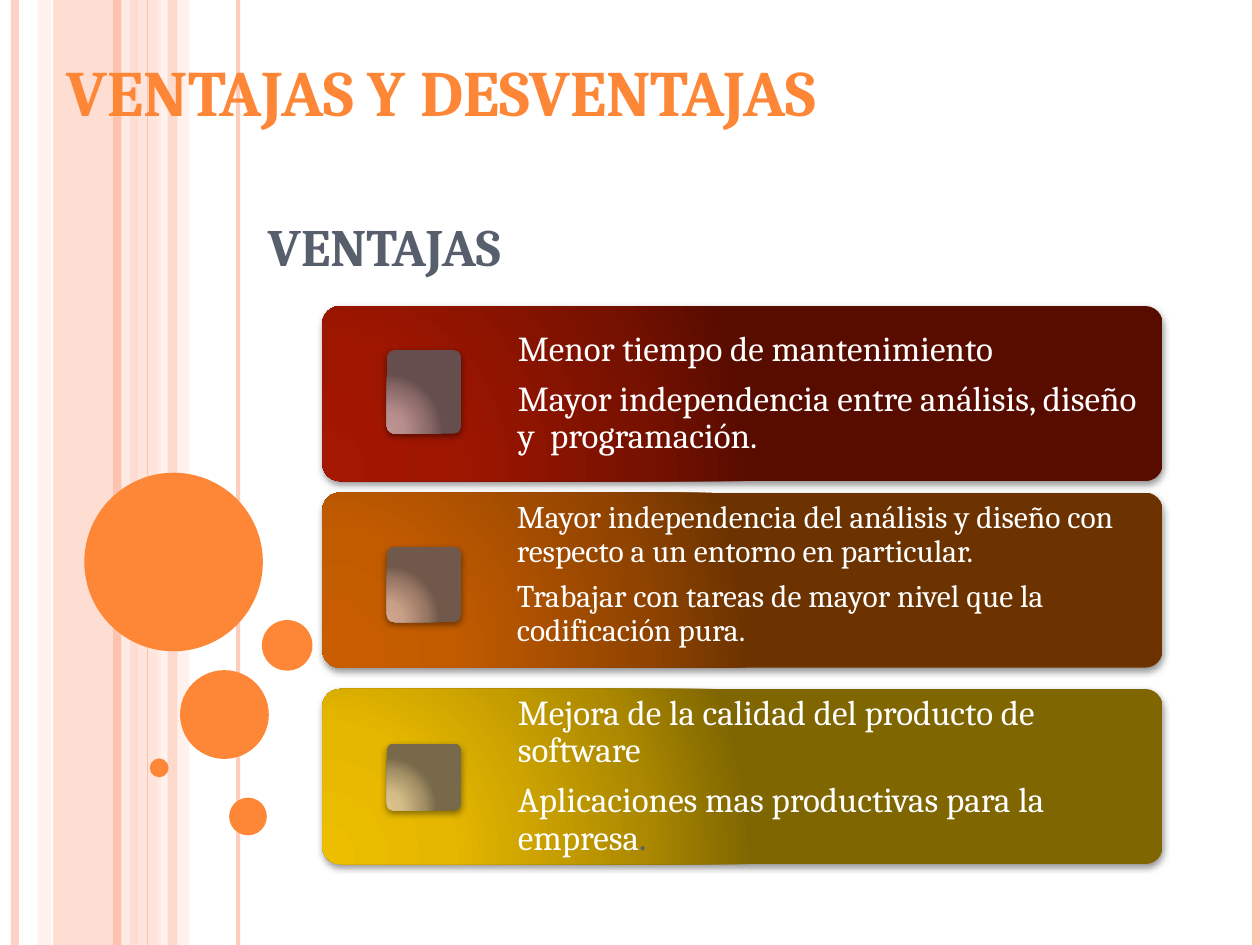
from lxml import etree
from pptx import Presentation
from pptx.dml.color import RGBColor
from pptx.enum.shapes import MSO_CONNECTOR, MSO_SHAPE
from pptx.enum.text import MSO_ANCHOR, MSO_AUTO_SIZE, PP_ALIGN
from pptx.oxml import parse_xml
from pptx.oxml.ns import nsdecls, qn
from pptx.util import Cm, Pt

WIDTH, HEIGHT = 25.4, 19.05
ORANGE, SLATE, WHITE = "FE8637", "575F6D", "FFFFFF"
PEACH, BLUSH, PALE = "FEC3AE", "FFD9CE", "FFEDE8"


def color(value):
    return RGBColor.from_string(value)


def set_alpha(fill_parent, percent):
    """Make the solid fill inside the given element partly transparent."""
    if percent < 100:
        tone = next(fill_parent.iter(qn("a:srgbClr")))
        etree.SubElement(tone, qn("a:alpha")).set("val", str(percent * 1000))


class Painter:
    font = "Cambria"

    def __init__(self, page):
        self.page = page
        self.shapes = page.shapes

    def shape(self, kind, left, top, width, height, fill, alpha=100):
        item = self.shapes.add_shape(kind, Cm(left), Cm(top), Cm(width), Cm(height))
        item.shadow.inherit = False
        item.line.fill.background()
        item.fill.solid()
        item.fill.fore_color.rgb = color(fill)
        set_alpha(item._element.spPr, alpha)
        return item

    def stripe(self, x, tone, points, alpha=100):
        line = self.shapes.add_connector(
            MSO_CONNECTOR.STRAIGHT, Cm(x), Cm(0), Cm(x), Cm(HEIGHT))
        line.line.color.rgb = color(tone)
        line.line.width = Pt(points)
        properties = line._element.spPr
        set_alpha(properties, alpha)
        etree.SubElement(properties, qn("a:effectLst"))

    def glossy(self, left, top, width, height, tones):
        """Rounded shape with a radial gradient and a soft shadow."""
        item = self.shape(MSO_SHAPE.ROUNDED_RECTANGLE, left, top, width, height, tones[0])
        item.adjustments[0] = 0.1
        stops = "".join(
            f'<a:gs pos="{position * 1000}"><a:srgbClr val="{tone}"/></a:gs>'
            for position, tone in zip((0, 30, 75, 100), tones))
        gradient = parse_xml(
            f'<a:gradFill {nsdecls("a")} rotWithShape="1"><a:gsLst>{stops}</a:gsLst>'
            '<a:path path="circle"><a:fillToRect l="5000" t="100000" r="120000" b="10000"/>'
            '</a:path></a:gradFill>')
        shadow = parse_xml(
            f'<a:outerShdw {nsdecls("a")} blurRad="{Pt(4)}" dist="{Pt(1.6)}" dir="5400000"'
            ' rotWithShape="0"><a:srgbClr val="000000"><a:alpha val="42000"/></a:srgbClr>'
            '</a:outerShdw>')
        properties = item._element.spPr
        properties.replace(properties.find(qn("a:solidFill")), gradient)
        properties.find(qn("a:effectLst")).append(shadow)

    def style(self, para, size, tone, bold=False):
        para.font.name = self.font
        para.font.size = Pt(size)
        para.font.bold = bold
        para.font.color.rgb = color(tone)

    def title(self, text, left, top, width, height):
        box = self.page.shapes.title
        box.left, box.top, box.width, box.height = Cm(left), Cm(top), Cm(width), Cm(height)
        self.shapes._spTree.append(box._element)  # in front of the decoration
        frame = box.text_frame
        frame.text = text
        frame.auto_size = MSO_AUTO_SIZE.NONE
        frame.vertical_anchor = MSO_ANCHOR.TOP
        para = frame.paragraphs[0]
        para.alignment = PP_ALIGN.LEFT
        para.space_before = Pt(6)
        self.style(para, 37, ORANGE, bold=True)

    def text_box(self, left, top, width, height, anchor):
        frame = self.shapes.add_textbox(
            Cm(left), Cm(top), Cm(width), Cm(height)).text_frame
        frame.word_wrap = True
        frame.vertical_anchor = anchor
        return frame

    def heading(self, text, left, top, width, height, indent):
        frame = self.text_box(left, top, width, height, MSO_ANCHOR.BOTTOM)
        frame.margin_left = Cm(indent)
        para = frame.paragraphs[0]
        para.text = text
        para.alignment = PP_ALIGN.CENTER
        self.style(para, 30, SLATE, bold=True)

    def card_text(self, texts, left, top, width, height, size, anchor):
        frame = self.text_box(left, top, width, height, anchor)
        frame.margin_left = frame.margin_right = Cm(size / 100)
        frame.margin_top = frame.margin_bottom = Cm(size / 100)
        for index, text in enumerate(texts):
            para = frame.add_paragraph() if index else frame.paragraphs[0]
            para.line_spacing = 0.9
            para.space_after = Pt(0.35 * size)
            self.style(para, size, WHITE)
            para.add_run().text = text
        return frame


# Vertical bands: left, width, colour, opacity
BANDS = [(1.07, 1.7, PEACH, 54), (0.76, 0.28, BLUSH, 36),
         (2.74, 0.51, BLUSH, 70), (3.18, 0.64, PALE, 71)]
# Vertical lines: x, colour, points, opacity
STRIPES = [(0.3, PEACH, 4.5, 73), (2.54, PALE, 4.5, 83), (2.36, PEACH, 4.5, 100),
           (4.8, PEACH, 2.25, 82), (2.97, PEACH, 0.75, 100), (25.32, PEACH, 4.5, 100)]
# Bubbles: left, top, diameter
BUBBLES = [(1.7, 9.53, 3.6), (3.63, 13.51, 1.79), (3.02, 15.29, 0.38),
           (4.62, 16.08, 0.76), (5.28, 12.5, 1.02)]
# Cards: top, card tones, icon top, icon height, icon tones, text size, anchor, texts
CARDS = [
    (6.17, ("A41700", "9F1600", "771100", "580C00"),
     7.06, 1.68, ("BE9492", "B78E8D", "8A6A69", "664E4E"), 20, MSO_ANCHOR.MIDDLE,
     ("Menor tiempo de mantenimiento",
      "Mayor independencia entre análisis, diseño y  programación.")),
    (9.93, ("C95E00", "C25B00", "914400", "6C3300"),
     11.02, 1.52, ("D0A58C", "C89F87", "987764", "70584A"), 18, MSO_ANCHOR.TOP,
     ("Mayor independencia del análisis y diseño con respecto a un entorno en particular.",
      "Trabajar con tareas de mayor nivel que la codificación pura.")),
    (13.89, ("EDBE00", "E5B700", "AC8900", "7F6600"),
     14.99, 1.35, ("DCC38C", "D4BC87", "A18E64", "77694A"), 20, MSO_ANCHOR.MIDDLE,
     ("Mejora de la calidad del producto de software",
      "Aplicaciones mas productivas para la empresa")),
]


def main():
    deck = Presentation()
    deck.slide_width, deck.slide_height = Cm(WIDTH), Cm(HEIGHT)
    painter = Painter(deck.slides.add_slide(deck.slide_layouts[5]))

    # Striped and bubbled decoration
    for left, width, tone, alpha in BANDS:
        painter.shape(MSO_SHAPE.RECTANGLE, left, 0, width, HEIGHT, tone, alpha)
    for stripe in STRIPES:
        painter.stripe(*stripe)
    painter.shape(MSO_SHAPE.RECTANGLE, 3.38, 0, 0.2, HEIGHT, PEACH, 51)
    for left, top, diameter in BUBBLES:
        painter.shape(MSO_SHAPE.OVAL, left, top, diameter, diameter, ORANGE)

    # Title and heading
    painter.title("VENTAJAS Y DESVENTAJAS", 1.09, 0.91, 22.61, 4.39)
    painter.heading("VENTAJAS", 0, 3.73, 10.8, 1.98, indent=4.95)

    # Cards with their icons and texts
    for top, tones, icon_top, icon_height, icon_tones, size, anchor, texts in CARDS:
        painter.glossy(6.5, top, 16.94, 3.53, tones)
        frame = painter.card_text(texts, 10.24, top, 13.18, 3.53, size, anchor)
        painter.glossy(7.8, icon_top, 1.5, icon_height, icon_tones)

    # The final full stop is grey
    span = frame.paragraphs[-1].add_run()
    span.text = "."
    span.font.color.rgb = color(SLATE)

    deck.save("out.pptx")


if __name__ == "__main__":
    main()
